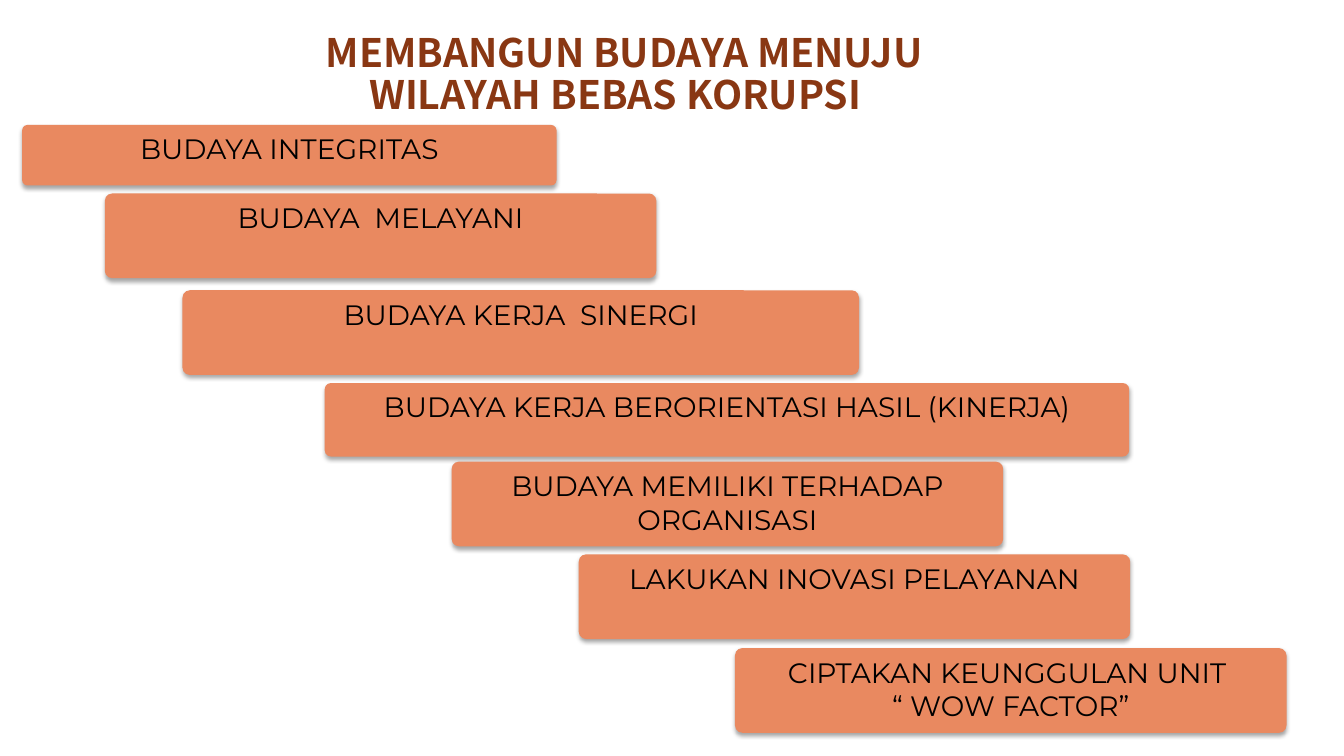
import pptx
import pptx.util
import pptx.dml.color
import pptx.enum.shapes
import pptx.enum.text
import pptx.oxml
import pptx.oxml.ns

Inches = pptx.util.Inches
Pt = pptx.util.Pt
COLORS = {"title": "893713", "bar": "E98960", "text": "000000", "shadow": "000000"}
SHADOW = (
    f'<a:outerShdw {pptx.oxml.ns.nsdecls("a")} blurRad="{Pt(3.1)}" dist="{Pt(1.8)}" '
    f'dir="5400000" rotWithShape="0"><a:srgbClr val="{COLORS["shadow"]}">'
    '<a:alpha val="35000"/></a:srgbClr></a:outerShdw>'
)

presentation = pptx.Presentation()
presentation.slide_width = Inches(13.33)
presentation.slide_height = Inches(7.5)
slide = presentation.slides.add_slide(presentation.slide_layouts[6])


def write_text(shape, text, *, size, font, color, bold=False, spacing=None, before=None,
               anchor=pptx.enum.text.MSO_ANCHOR.TOP):
    frame = shape.text_frame
    frame.word_wrap = True
    frame.vertical_anchor = anchor
    frame.text = text
    for paragraph in frame.paragraphs:
        paragraph.alignment = pptx.enum.text.PP_ALIGN.CENTER
        paragraph.line_spacing = spacing
        paragraph.space_before = before
        for run in paragraph.runs:
            run.font.size = Pt(size)
            run.font.name = font
            run.font.bold = bold
            run.font.color.rgb = pptx.dml.color.RGBColor.from_string(COLORS[color])


title = slide.shapes.add_textbox(Inches(2.87), Inches(0.66), Inches(6.55), Inches(0.18))
title.text_frame.margin_left = title.text_frame.margin_right = 0
title.text_frame.margin_top = title.text_frame.margin_bottom = 0
write_text(title, " MEMBANGUN BUDAYA MENUJU WILAYAH BEBAS KORUPSI ", size=28,
           font="Noto Sans CJK SC", color="title", bold=True, spacing=Pt(29.9),
           before=Pt(1.5), anchor=pptx.enum.text.MSO_ANCHOR.MIDDLE)

steps = [
    ("BUDAYA INTEGRITAS", 0.22, 1.24, 5.3, 0.6),
    ("BUDAYA  MELAYANI", 1.04, 1.92, 5.47, 0.84),
    ("BUDAYA KERJA  SINERGI", 1.81, 2.88, 6.71, 0.84),
    ("BUDAYA KERJA BERORIENTASI HASIL (KINERJA)", 3.22, 3.8, 7.98, 0.73),
    ("BUDAYA MEMILIKI TERHADAP ORGANISASI", 4.48, 4.58, 5.47, 0.84),
    ("LAKUKAN INOVASI PELAYANAN", 5.74, 5.5, 5.47, 0.84),
    ("CIPTAKAN KEUNGGULAN UNIT \n“ WOW FACTOR”", 7.29, 6.43, 5.47, 0.84),
]
for text, left, top, width, height in steps:
    bar = slide.shapes.add_shape(pptx.enum.shapes.MSO_SHAPE.ROUNDED_RECTANGLE,
                                 Inches(left), Inches(top), Inches(width), Inches(height))
    bar.adjustments[0] = 0.087
    bar.fill.solid()
    bar.fill.fore_color.rgb = pptx.dml.color.RGBColor.from_string(COLORS["bar"])
    bar.line.fill.background()
    bar.shadow.inherit = False
    effects = bar._element.spPr.find(pptx.oxml.ns.qn("a:effectLst"))
    effects.append(pptx.oxml.parse_xml(SHADOW))
    write_text(bar, text, size=20, font="Montserrat", color="text")

presentation.save("out.pptx")
